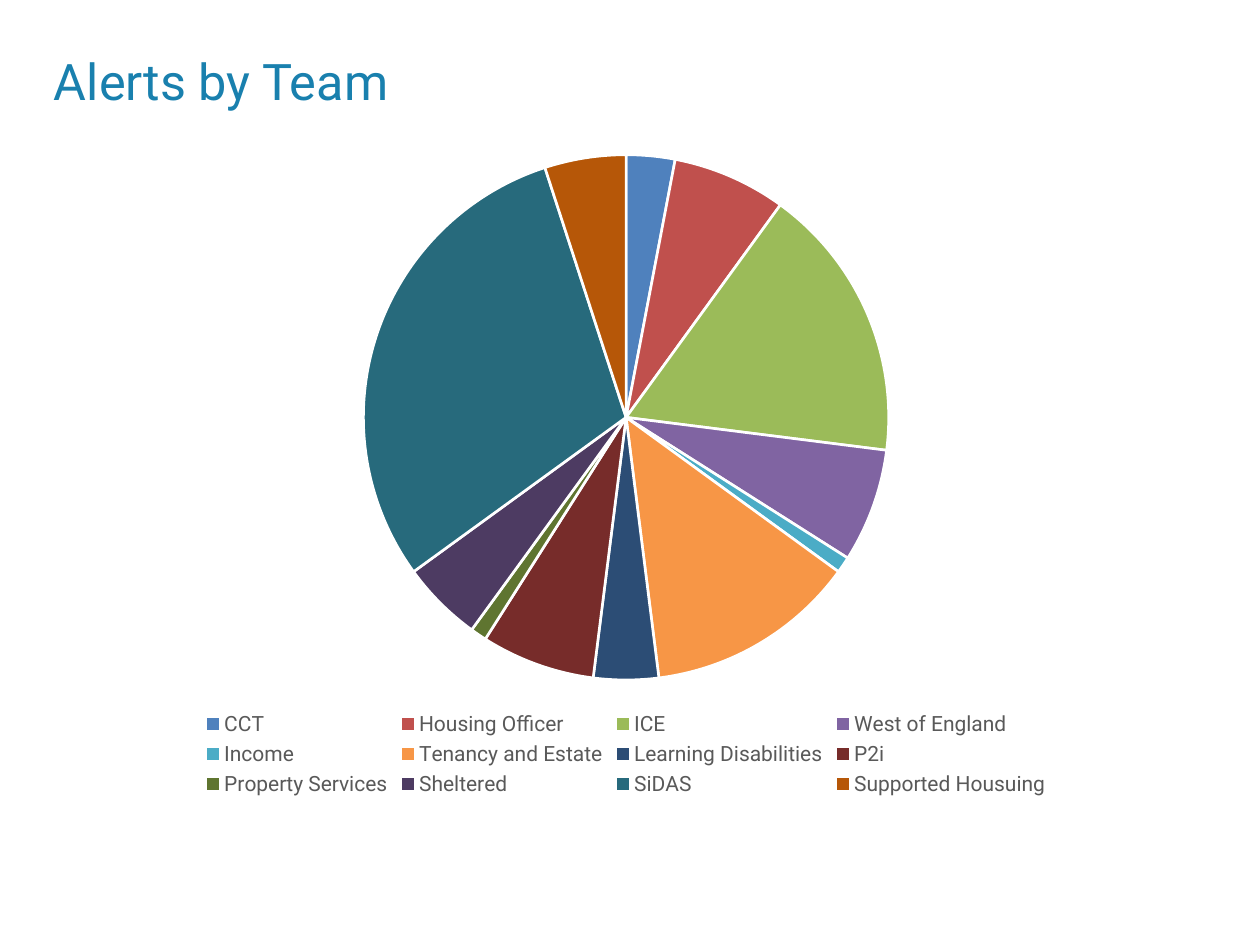
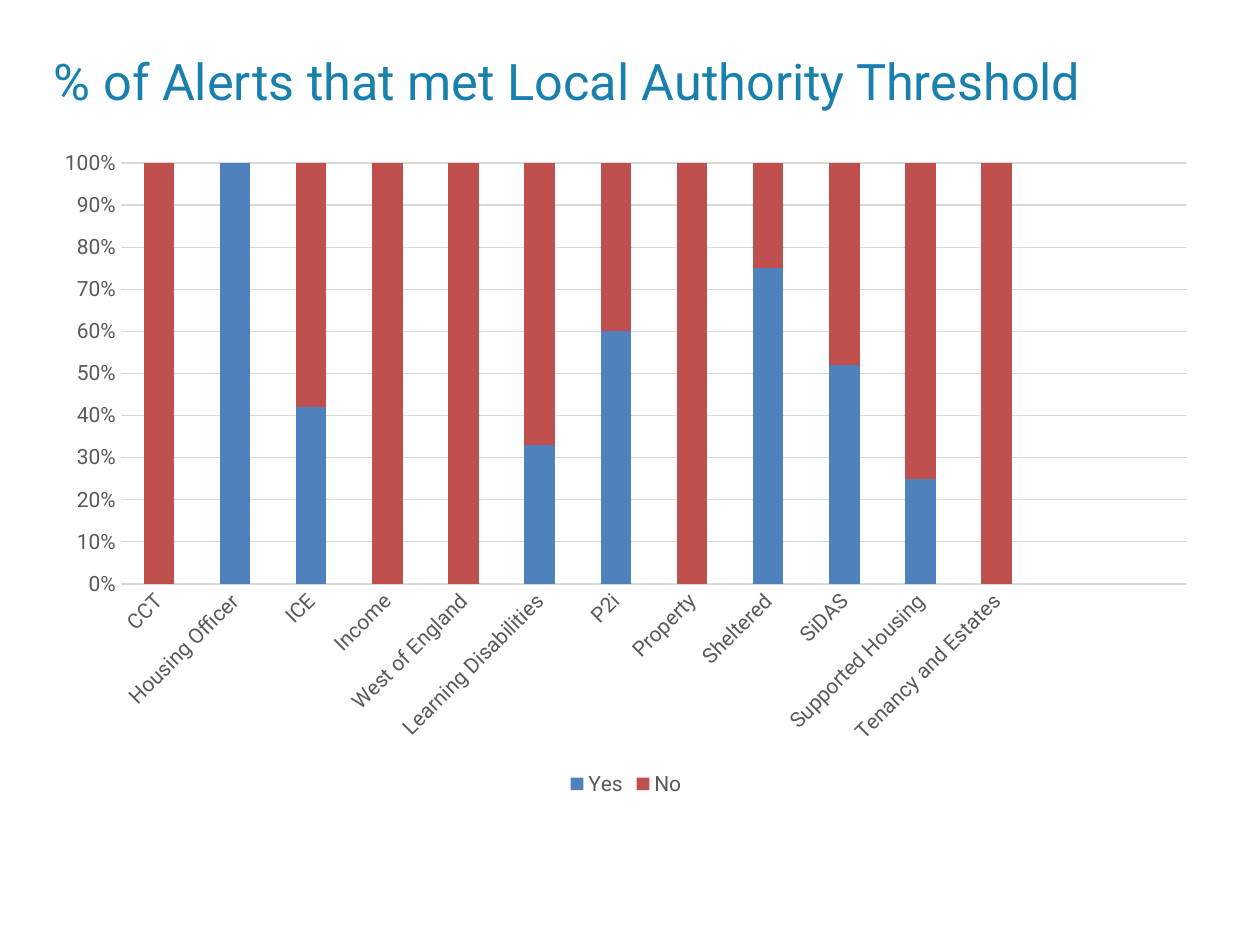
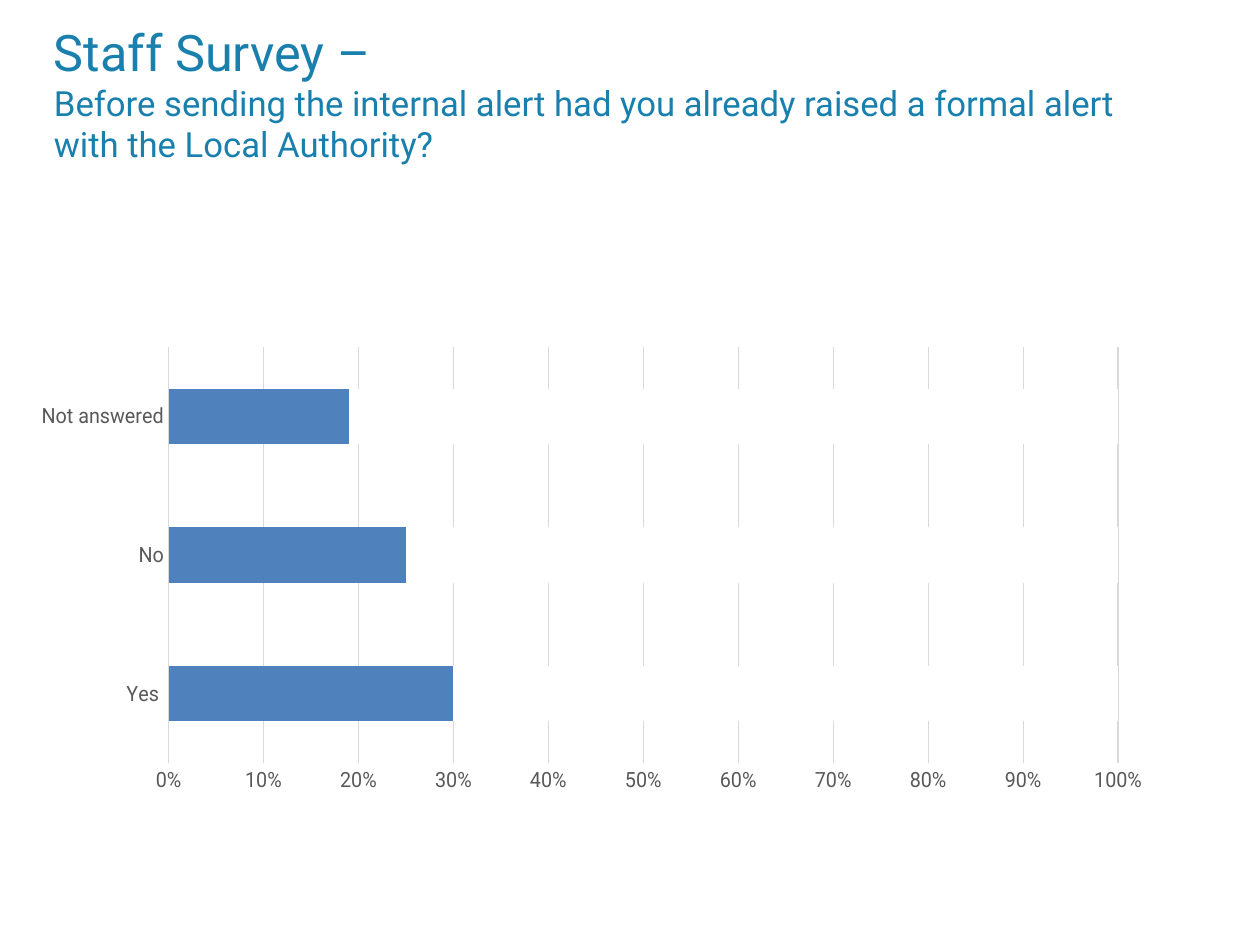
import pptx
import pptx.chart.data
import pptx.dml.color
import pptx.enum.chart
import pptx.enum.text
import pptx.oxml
import pptx.oxml.ns
import pptx.util

Pt = pptx.util.Pt
RGBColor = pptx.dml.color.RGBColor
XL = pptx.enum.chart.XL_CHART_TYPE

FONT = "Roboto"
TITLE = RGBColor(0x19, 0x80, 0xAE)
LABEL = RGBColor(0x59, 0x59, 0x59)
GRID = RGBColor(0xD9, 0xD9, 0xD9)
WHITE = RGBColor(0xFF, 0xFF, 0xFF)
BLUE = RGBColor(0x4F, 0x81, 0xBD)
RED = RGBColor(0xC0, 0x50, 0x4D)
TEAM_COLORS = [BLUE, RED] + [RGBColor.from_string(c) for c in (
    "9BBB59", "8064A2", "4BACC6", "F79646", "2C4D75",
    "772C2A", "5F7530", "4D3B62", "276A7C", "B65708")]

LEFT = 23.76
CHART_WIDTH = 668
CHART_BOTTOM = 458

TEAM_ALERTS = {
    "CCT": 3, "Housing Officer": 7, "ICE": 17, "West of England": 7,
    "Income": 1, "Tenancy and Estate": 13, "Learning Disabilities": 4,
    "P2i": 7, "Property Services": 1, "Sheltered": 5, "SiDAS": 30,
    "Supported Housuing": 5,
}
# Percentages per team: met the threshold, did not meet it
THRESHOLD = {
    "CCT": (None, 100), "Housing Officer": (100, None), "ICE": (42, 58),
    "Income": (None, 100), "West of England": (None, 100),
    "Learning Disabilities": (33, 67), "P2i": (60, 40),
    "Property": (None, 100), "Sheltered": (75, 25), "SiDAS": (52, 48),
    "Supported Housing": (25, 75), "Tenancy and Estates": (None, 100),
}
EMPTY_SLOTS = 2
SURVEY = {"Yes ": 30, "No": 25, "Not answered": 19}


def set_font(font, size, color):
    font.name = FONT
    font.size = Pt(size)
    font.bold = False
    font.color.rgb = color


def add_text(p, text, size=28.8, color=TITLE):
    r = p.add_run()
    r.text = text
    set_font(r.font, size, color)


def add_title(s, text, subtitle=None):
    """Title centred in its band, or raised to leave room for a subtitle."""
    top, height = (12, 105) if subtitle else (LEFT, 44.64)
    sp = s.shapes.add_textbox(Pt(LEFT), Pt(top), Pt(648), Pt(height))
    tf = sp.text_frame
    tf.word_wrap = True
    tf.margin_top = tf.margin_bottom = 0
    anchor = pptx.enum.text.MSO_ANCHOR
    tf.vertical_anchor = anchor.TOP if subtitle else anchor.MIDDLE
    add_text(tf.paragraphs[0], text)
    if subtitle:
        add_text(tf.add_paragraph(), subtitle, size=19.8)


def add_chart(s, kind, categories, series, top=78.5, legend=True):
    data = pptx.chart.data.CategoryChartData()
    data.categories = categories
    for name, values in series:
        data.add_series(name, values)
    chart = s.shapes.add_chart(kind, Pt(LEFT), Pt(top), Pt(CHART_WIDTH),
                               Pt(CHART_BOTTOM - top), data).chart
    set_font(chart.font, 12, LABEL)
    chart.has_title = False
    chart.has_legend = legend
    if legend:
        chart.legend.position = pptx.enum.chart.XL_LEGEND_POSITION.BOTTOM
        chart.legend.include_in_layout = False
        set_font(chart.legend.font, 12, LABEL)
    return chart


def set_line(line, color, width=0.75):
    line.color.rgb = color
    line.width = Pt(width)


def style_bars(chart, colors):
    plot = chart.plots[0]
    plot.vary_by_categories = False
    plot.gap_width = 150
    plot.overlap = 100
    for series, color in zip(plot.series, colors):
        series.invert_if_negative = False
        series.format.fill.solid()
        series.format.fill.fore_color.rgb = color
    for axis in (chart.category_axis, chart.value_axis):
        axis.major_tick_mark = axis.minor_tick_mark = pptx.enum.chart.XL_TICK_MARK.NONE
        set_font(axis.tick_labels.font, 12, LABEL)
    set_line(chart.category_axis.format.line, GRID)
    value_axis = chart.value_axis
    value_axis.format.line.fill.background()
    value_axis.has_major_gridlines = True
    set_line(value_axis.major_gridlines.format.line, GRID)
    value_axis.tick_labels.number_format = "0%"
    value_axis.tick_labels.number_format_is_linked = False


def slant_labels(axis):
    body = axis.tick_labels.font._element.getparent().getparent().getparent().find(
        pptx.oxml.ns.qn("a:bodyPr"))
    body.set("rot", "-2700000")
    body.set("vert", "horz")


def place_plot(chart, x, y, w, h):
    """Fix the inner plot area, in fractions of the chart."""
    area = chart.plots[0]._element.getparent()
    for old in area.findall(pptx.oxml.ns.qn("c:layout")):
        area.remove(old)
    sizes = "".join(f'<c:{tag} val="{val}"/>'
                    for tag, val in (("x", x), ("y", y), ("w", w), ("h", h)))
    area.insert(0, pptx.oxml.parse_xml(
        f'<c:layout {pptx.oxml.ns.nsdecls("c")}><c:manualLayout>'
        '<c:layoutTarget val="inner"/><c:xMode val="edge"/><c:yMode val="edge"/>'
        f'{sizes}</c:manualLayout></c:layout>'))


def team_slide(s):
    chart = add_chart(s, XL.PIE, list(TEAM_ALERTS),
                      [("Series 1", list(TEAM_ALERTS.values()))])
    plot = chart.plots[0]
    plot.vary_by_categories = True
    for i, color in enumerate(TEAM_COLORS):
        fmt = plot.series[0].points[i].format
        fmt.fill.solid()
        fmt.fill.fore_color.rgb = color
        set_line(fmt.line, WHITE, 1.5)
    add_title(s, "Alerts by Team")


def threshold_slide(s):
    padding = [None] * EMPTY_SLOTS
    met, unmet = zip(*THRESHOLD.values())
    chart = add_chart(s, XL.COLUMN_STACKED_100,
                      list(THRESHOLD) + [""] * EMPTY_SLOTS,
                      [("Yes", [*met, *padding]), ("No", [*unmet, *padding])])
    style_bars(chart, (BLUE, RED))
    slant_labels(chart.category_axis)
    add_title(s, "% of Alerts that met Local Authority Threshold")


def survey_slide(s):
    shares = list(SURVEY.values())
    chart = add_chart(s, XL.BAR_STACKED_100, list(SURVEY),
                      [("Series 1", shares),
                       ("Series 2", [100 - share for share in shares])],
                      top=116.5, legend=False)
    style_bars(chart, (BLUE, WHITE))
    place_plot(chart, 0.053, 0.24, 0.863, 0.696)
    add_title(s, "Staff Survey –",
              "Before sending the internal alert had you already raised "
              "a formal alert with the Local Authority?")


def main():
    prs = pptx.Presentation()
    prs.slide_width, prs.slide_height = Pt(720), Pt(540)
    for build in (team_slide, threshold_slide, survey_slide):
        build(prs.slides.add_slide(prs.slide_layouts[6]))
    prs.save("out.pptx")


if __name__ == "__main__":
    main()
